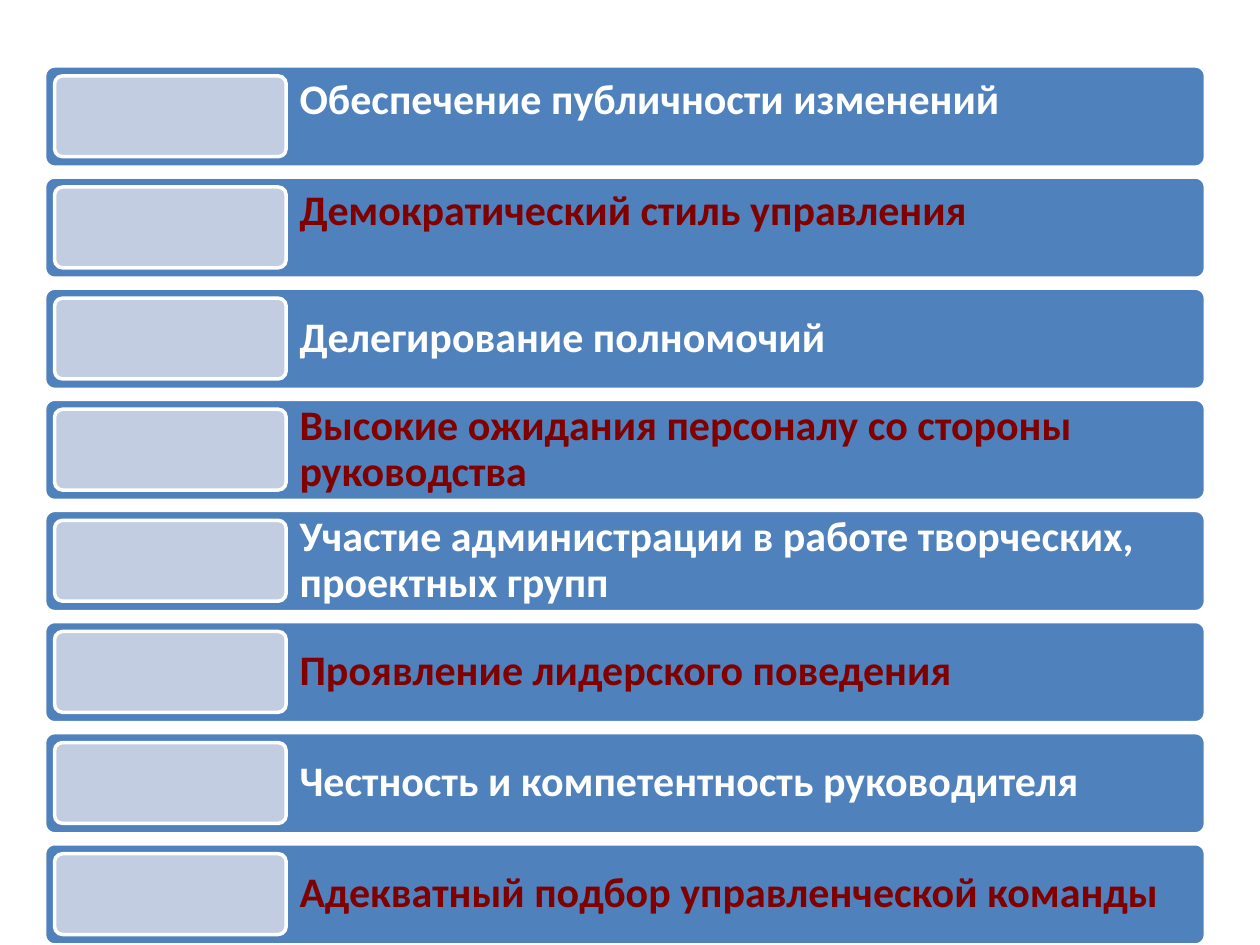
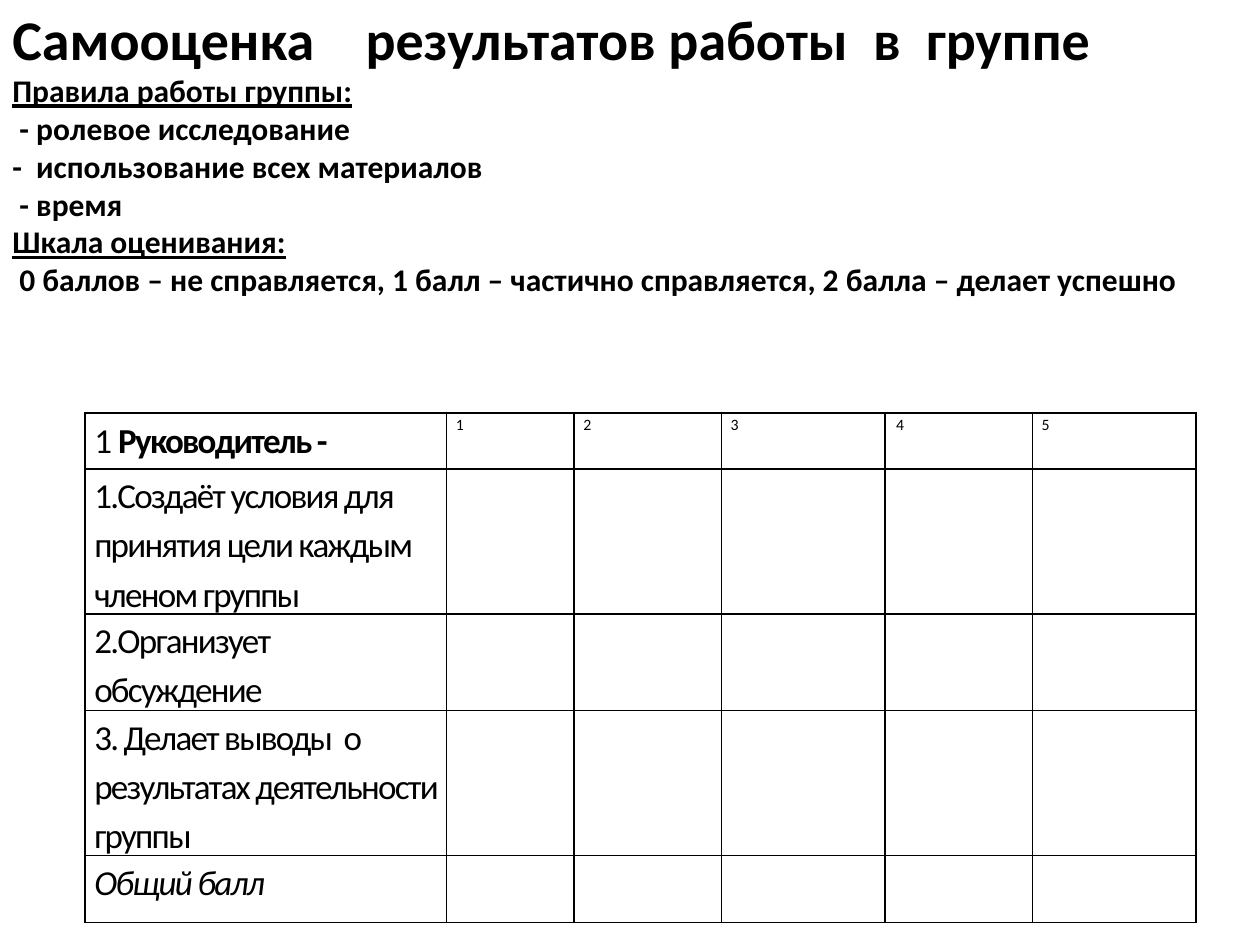
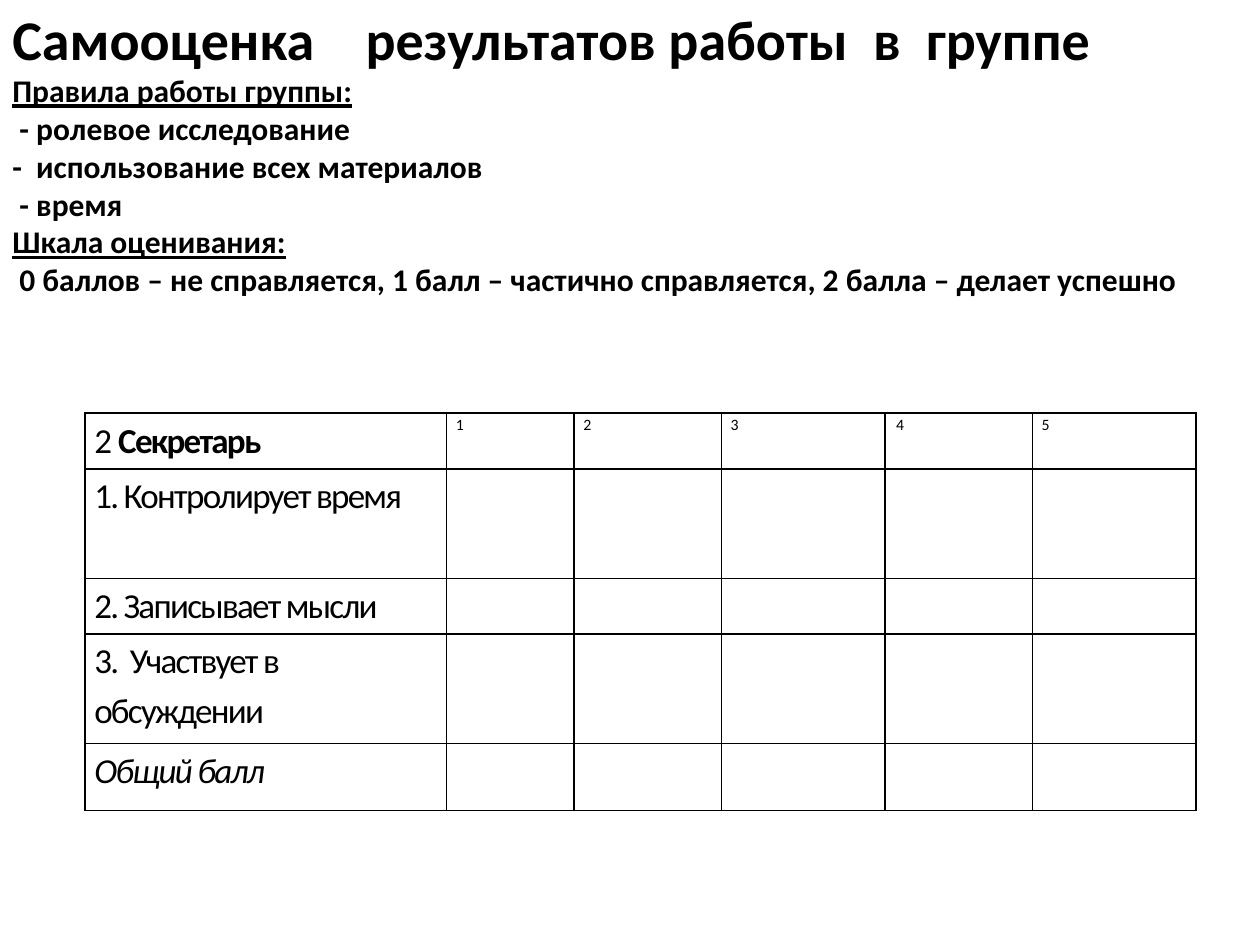
"""Build three slides: management principles and two group self-assessment sheets."""
from dataclasses import dataclass

from lxml import etree
from pptx import Presentation
from pptx import util as u
from pptx.dml.color import RGBColor
from pptx.enum import shapes, text
from pptx.oxml.ns import qn

FONT = "Calibri"
WHITE, BLACK, BLUE, PALE, RED = "FFFFFF", "000000", "4F81BD", "C2CDE1", "800000"
TOP, MID = text.MSO_ANCHOR.TOP, text.MSO_ANCHOR.MIDDLE


@dataclass(frozen=True)
class Box:
    """Place and size in centimetres."""
    left: float
    top: float
    width: float
    height: float

    def cm(self) -> tuple:
        """Give the four lengths for a shape call."""
        return tuple(u.Cm(n) for n in (self.left, self.top, self.width, self.height))


@dataclass(frozen=True)
class Bar:
    """One principle: its words, colour and anchor."""
    words: str
    color: str = WHITE
    anchor: text.MSO_ANCHOR = MID


@dataclass(frozen=True)
class Line:
    """One line of the rules above a table."""
    words: str
    size: float = 18
    under: bool = False
    tab: float = 0


@dataclass(frozen=True)
class Sheet:
    """A group role and the tasks it is scored on."""
    number: str
    role: str
    tasks: tuple


BARS = (
    Bar("Обеспечение публичности изменений", anchor=TOP),
    Bar("Демократический стиль управления", RED, TOP),
    Bar("Делегирование полномочий"),
    Bar("Высокие ожидания персоналу со стороны руководства", RED),
    Bar("Участие администрации в работе творческих, проектных групп"),
    Bar("Проявление лидерского поведения", RED),
    Bar("Честность и компетентность руководителя"),
    Bar("Адекватный подбор управленческой команды", RED),
)
RULES = (
    Line("Самооценка\tрезультатов работы  в  группе", size=32, tab=7.12),
    Line("Правила работы группы:", under=True),
    Line(" - ролевое исследование"),
    Line("-  использование всех материалов"),
    Line(" - время"),
    Line("Шкала оценивания:", under=True),
    Line(" 0 баллов – не справляется, 1 балл – частично справляется, "
         "2 балла – делает успешно"),
)
SHEETS = (
    Sheet("1 ", "Руководитель -", (
        "1.Создаёт условия для принятия цели каждым членом группы",
        "2.Организует обсуждение",
        "3. Делает выводы  о результатах деятельности группы")),
    Sheet("2 ", "Секретарь", (
        "1. Контролирует время",
        "2. Записывает мысли",
        "3.  Участвует в обсуждении")),
)
TOTAL = "Общий балл"
MARKS = ("1", "2", "3", " 4", "5")
COLS = (7.29, 2.57, 2.97, 3.3, 2.97, 3.3)
ROWS = (1.12, 2.21, 1.12, 2.21, 1.35)
PITCH = 2.24


def rgb(code: str) -> RGBColor:
    """Turn a hex string into a colour."""
    return RGBColor.from_string(code)


def write(para, words: str, *, size: float = 20, color: str = BLACK, bold: bool = False,
          italic: bool = False, under: bool = False, space: float = 0,
          lead: float | None = None) -> None:
    """Add a formatted run to a paragraph."""
    run = para.add_run()
    run.text = words
    font = run.font
    font.name, font.size = FONT, u.Pt(size)
    font.bold, font.italic, font.underline = bold, italic, under
    font.color.rgb = rgb(color)
    if space:
        run._r.get_or_add_rPr().set("spc", str(int(space * 100)))
    if lead:
        para.line_spacing = lead


def panel(group, box: Box, fill: str) -> None:
    """Draw a rounded panel with a white outline."""
    shape = group.shapes.add_shape(shapes.MSO_SHAPE.ROUNDED_RECTANGLE, *box.cm())
    shape.adjustments[0] = 0.1
    shape.shadow.inherit = False
    shape.fill.solid()
    shape.fill.fore_color.rgb = rgb(fill)
    shape.line.color.rgb = rgb(WHITE)
    shape.line.width = u.Pt(2)


def label(parent, box: Box, anchor: text.MSO_ANCHOR):
    """Add a wrapping text box and return its frame."""
    frame = parent.shapes.add_textbox(*box.cm()).text_frame
    frame.word_wrap = True
    frame.vertical_anchor = anchor
    return frame


def stack(slide) -> None:
    """Draw the column of principles."""
    group = slide.shapes.add_group_shape()
    for i, bar in enumerate(BARS):
        top = 1.33 + i * PITCH
        panel(group, Box(0.9, top, 23.4, 2.04), BLUE)
        frame = label(group, Box(5.79, top, 18.51, 2.04), bar.anchor)
        frame.margin_top = frame.margin_bottom = u.Cm(0.25)
        write(frame.paragraphs[0], bar.words, size=24, color=bar.color, bold=True, lead=0.9)
        panel(group, Box(1.1, top + 0.2, 4.67, 1.63), PALE)


def rules(slide) -> None:
    """Write the title, the rules and the scale."""
    frame = label(slide, Box(0, -0.08, 25.4, 6.25), MID)
    frame.auto_size = text.MSO_AUTO_SIZE.SHAPE_TO_FIT_TEXT
    for i, line in enumerate(RULES):
        para = frame.add_paragraph() if i else frame.paragraphs[0]
        write(para, line.words, size=line.size, bold=True, under=line.under)
        if line.tab:
            tabs = etree.SubElement(para._p.get_or_add_pPr(), qn("a:tabLst"))
            etree.SubElement(tabs, qn("a:tab"), pos=str(u.Cm(line.tab)), algn="l")


def edge(cell) -> None:
    """Give a cell black borders, no fill and tight margins."""
    props = cell._tc.get_or_add_tcPr()
    for side in ("lnL", "lnR", "lnT", "lnB"):
        line = etree.SubElement(props, qn(f"a:{side}"), w=str(u.Pt(1)))
        fill = etree.SubElement(line, qn("a:solidFill"))
        etree.SubElement(fill, qn("a:srgbClr"), val=BLACK)
    cell.fill.background()
    cell.margin_left = cell.margin_right = u.Cm(0.19)
    cell.margin_top = cell.margin_bottom = 0


def grid(slide, sheet: Sheet) -> None:
    """Draw the score table of a role."""
    box = Box(1.71, 8.33, sum(COLS), sum(ROWS))
    table = slide.shapes.add_table(len(ROWS), len(COLS), *box.cm()).table
    table.first_row = table.horz_banding = False
    for col, width in zip(table.columns, COLS):
        col.width = u.Cm(width)
    for row, height in zip(table.rows, ROWS):
        row.height = u.Cm(height)
    for cell in table.iter_cells():
        edge(cell)

    def put(row: int, col: int, words: str, **style) -> None:
        """Write into a cell with the table's spacing."""
        para = table.cell(row, col).text_frame.paragraphs[0]
        write(para, words, space=-1, lead=1.15, **style)

    put(0, 0, sheet.number)
    put(0, 0, sheet.role, bold=True)
    for col, mark in enumerate(MARKS, 1):
        put(0, col, mark, size=9)
    for row, task in enumerate(sheet.tasks, 1):
        put(row, 0, task)
    put(len(ROWS) - 1, 0, TOTAL, italic=True)


def main() -> None:
    """Build and save the slides."""
    deck = Presentation()
    deck.slide_width, deck.slide_height = u.Cm(25.4), u.Cm(19.05)
    blank = deck.slide_layouts[6]
    stack(deck.slides.add_slide(blank))
    for sheet in SHEETS:
        slide = deck.slides.add_slide(blank)
        grid(slide, sheet)
        rules(slide)
    deck.save("out.pptx")


if __name__ == "__main__":
    main()
